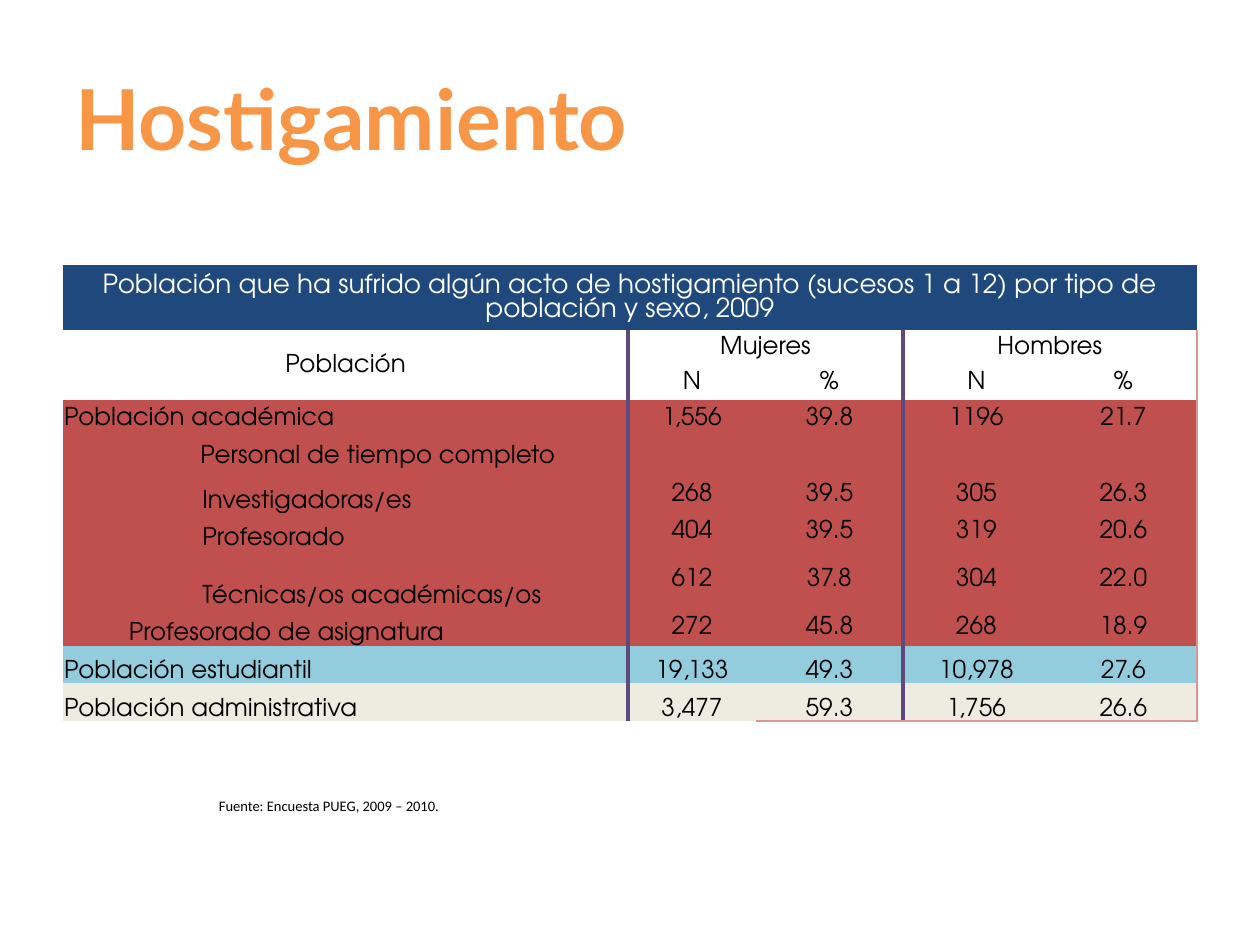
from dataclasses import dataclass

from lxml import etree
from pptx import Presentation
from pptx.dml.color import RGBColor
from pptx.enum.text import MSO_ANCHOR, PP_ALIGN
from pptx.oxml.ns import qn
from pptx.util import Pt

LEFT, CENTER = PP_ALIGN.LEFT, PP_ALIGN.CENTER
TOP, MIDDLE, BOTTOM = MSO_ANCHOR.TOP, MSO_ANCHOR.MIDDLE, MSO_ANCHOR.BOTTOM
NO_STYLE = "{2D5ABB26-0587-4C30-8999-92F81FD0307C}"
SIDES = ("lnL", "lnR", "lnT", "lnB")


@dataclass(frozen=True)
class Theme:
    title_font: str = "Lato"
    table_font: str = "TeX Gyre Adventor"
    source_font: str = "Calibri"
    title_size: float = 48
    heading_size: float = 15
    body_size: float = 14
    source_size: float = 8.3
    orange: str = "F79646"
    black: str = "000000"
    white: str = "FFFFFF"
    navy: str = "1F497D"
    red: str = "C0504D"
    blue: str = "93CDDD"
    cream: str = "EEECE1"
    divider: tuple = ("604A7B", 2.25)
    edge: tuple = ("D99694", 1)


THEME = Theme()
COLUMNS = [37, 42, 244, 73, 84, 84, 84]
ROWS = [37, 20, 20] + [21.5] * 4 + [33] + [21.5] * 3
HEADING = ("Población que ha sufrido algún acto de hostigamiento "
           "(sucesos 1 a 12) por tipo de población y sexo, 2009")
RECORDS = [
    (0, "Población académica", ["1,556", "39.8", "1196", "21.7"], THEME.red, MIDDLE, MIDDLE),
    (1, "Personal de tiempo completo", [""] * 4, THEME.red, MIDDLE, MIDDLE),
    (2, "Investigadoras/es", ["268", "39.5", "305", "26.3"], THEME.red, BOTTOM, MIDDLE),
    (2, "Profesorado", ["404", "39.5", "319", "20.6"], THEME.red, BOTTOM, MIDDLE),
    (2, "Técnicas/os académicas/os", ["612", "37.8", "304", "22.0"], THEME.red, BOTTOM, MIDDLE),
    (1, "Profesorado de asignatura", ["272", "45.8", "268", "18.9"], THEME.red, BOTTOM, MIDDLE),
    (0, "Población estudiantil", ["19,133", "49.3", "10,978", "27.6"], THEME.blue, BOTTOM, BOTTOM),
    (0, "Población administrativa", ["3,477", "59.3", "1,756", "26.6"], THEME.cream, BOTTOM, BOTTOM),
]


def write(frame, text, *, font, size, color, bold=False, align=LEFT):
    para = frame.paragraphs[0]
    para.alignment = align
    span = para.add_run()
    span.text = text
    span.font.name = font
    span.font.size = Pt(size)
    span.font.bold = bold
    span.font.color.rgb = RGBColor.from_string(color)


def add_border(cell, side, border):
    properties = cell._tc.get_or_add_tcPr()
    line = etree.SubElement(properties, qn(f"a:{side}"))
    if border is None:
        etree.SubElement(line, qn("a:noFill"))
        return
    color, width = border
    line.set("w", str(Pt(width)))
    fill = etree.SubElement(line, qn("a:solidFill"))
    etree.SubElement(fill, qn("a:srgbClr"), val=color)


class SlideBuilder:
    """Hold the theme and the current page, and add elements to it."""

    def __init__(self, page, theme):
        self.page = page
        self.theme = theme

    def text(self, left, top, width, height, text, anchor=TOP, wrap=True, **style):
        box = self.page.shapes.add_textbox(Pt(left), Pt(top), Pt(width), Pt(height))
        box.text_frame.word_wrap = wrap
        box.text_frame.vertical_anchor = anchor
        write(box.text_frame, text, **style)

    def table(self, left, top, columns, rows):
        frame = self.page.shapes.add_table(len(rows), len(columns), Pt(left), Pt(top),
                                           Pt(sum(columns)), Pt(sum(rows)))
        table = frame.table
        table.first_row = table.horz_banding = False
        table._tbl.tblPr.find(qn("a:tableStyleId")).text = NO_STYLE
        for column, width in zip(table.columns, columns):
            column.width = Pt(width)
        for row, height in zip(table.rows, rows):
            row.height = Pt(height)
        return table

    def finish_cell(self, cell, fill, borders):
        cell.margin_left = cell.margin_right = cell.margin_top = Pt(0.7)
        cell.margin_bottom = 0
        for side in SIDES:
            add_border(cell, side, borders.get(side))
        if fill:
            cell.fill.solid()
            cell.fill.fore_color.rgb = RGBColor.from_string(fill)
        else:
            cell.fill.background()
        para = cell._tc.find(qn("a:txBody")).find(qn("a:p"))
        etree.SubElement(para, qn("a:endParaRPr"), sz=str(self.theme.body_size * 100))

    def cell(self, table, row, column, text, across=1, down=1, anchor=MIDDLE, **style):
        cell = table.cell(row, column)
        if across * down > 1:
            cell.merge(table.cell(row + down - 1, column + across - 1))
        cell.vertical_anchor = anchor
        if text:
            base = dict(font=self.theme.table_font, size=self.theme.body_size,
                        color=self.theme.black, align=CENTER)
            write(cell.text_frame, text, **(base | style))

    def borders(self, row, first, last):
        borders = {}
        if row > 0:
            if first in (3, 5):
                borders["lnL"] = self.theme.divider
            if last in (2, 4):
                borders["lnR"] = self.theme.divider
            elif last == len(COLUMNS) - 1:
                borders["lnR"] = self.theme.edge
        if row == len(ROWS) - 1 and first > 3:
            borders["lnB"] = self.theme.edge
        return borders

    def population_table(self):
        theme = self.theme
        table = self.table(36, 151.5, COLUMNS, ROWS)
        self.cell(table, 0, 0, HEADING, across=7, size=theme.heading_size, color=theme.white)
        self.cell(table, 1, 0, "Población", across=3, down=2)
        for column, group in ((3, "Mujeres"), (5, "Hombres")):
            self.cell(table, 1, column, group, across=2)
            self.cell(table, 2, column, "N")
            self.cell(table, 2, column + 1, "%")
        for row, (level, label, values, _, label_anchor, anchor) in enumerate(RECORDS, 3):
            align = LEFT if any(values) else CENTER
            self.cell(table, row, level, label, across=3 - level,
                      anchor=label_anchor, align=align)
            for column, value in enumerate(values, 3):
                self.cell(table, row, column, value, anchor=anchor)
        fills = [theme.navy, None, None] + [record[3] for record in RECORDS]
        for row, fill in enumerate(fills):
            for column in range(len(COLUMNS)):
                cell = table.cell(row, column)
                last = column + cell.span_width - 1 if cell.is_merge_origin else column
                self.finish_cell(cell, fill, self.borders(row, column, last))


def main():
    deck = Presentation()
    deck.slide_width, deck.slide_height = Pt(720), Pt(540)
    page = deck.slides.add_slide(deck.slide_layouts[6])
    builder = SlideBuilder(page, THEME)
    builder.text(118, 452, 141, 17, "Fuente: Encuesta PUEG, 2009 – 2010.", wrap=False,
                 font=THEME.source_font, size=THEME.source_size, color=THEME.black)
    builder.text(36, 21.6, 648, 90, "Hostigamiento", anchor=MIDDLE, font=THEME.title_font,
                 size=THEME.title_size, color=THEME.orange, bold=True)
    builder.population_table()
    deck.save("out.pptx")


if __name__ == "__main__":
    main()
